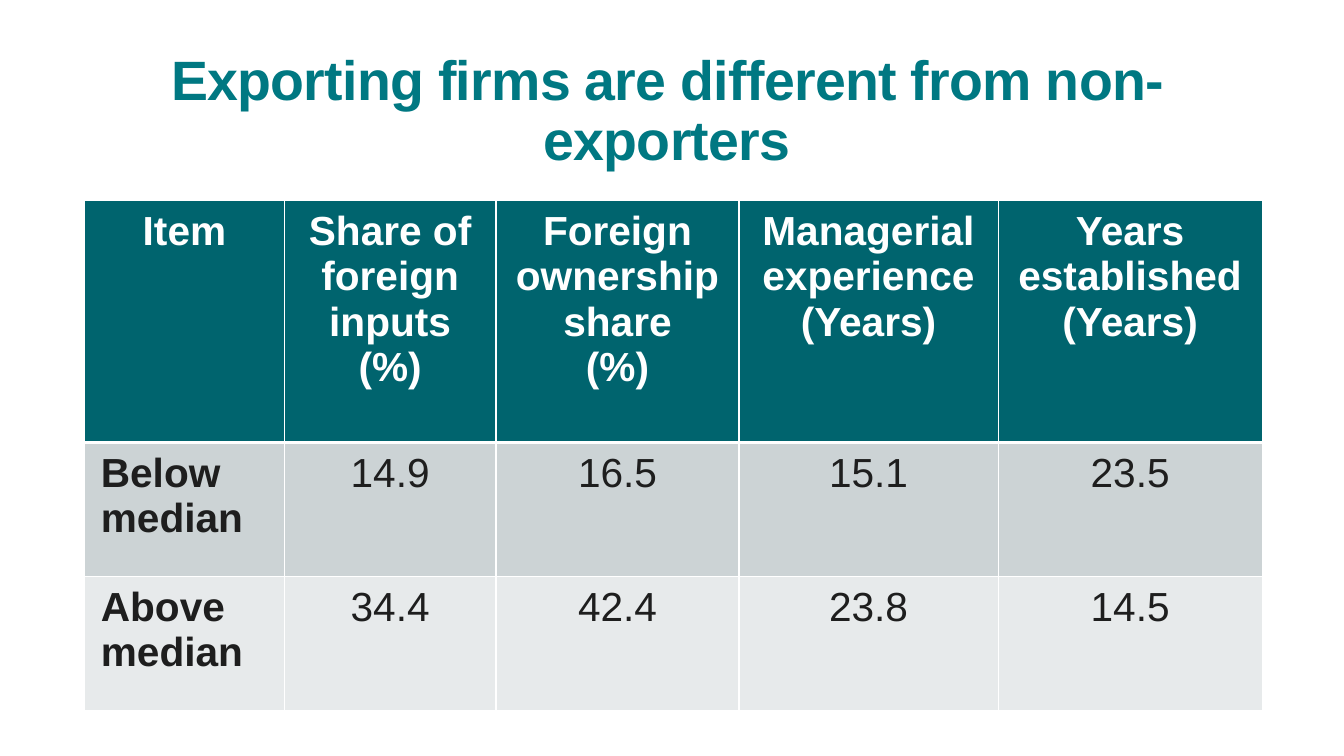
import pptx
import pptx.dml.color
import pptx.enum.text
import pptx.oxml
import pptx.oxml.ns
import pptx.util

ALIGN = pptx.enum.text.PP_ALIGN


def colour(value):
    return pptx.dml.color.RGBColor.from_string(value)


class SlideMaker:
    scale = 9144
    font = "Arial"
    title_colour = "007882"
    header_fill = "00646E"
    row_fills = ["CCD3D5", "E7EAEB"]
    ink = "1E1E1E"
    white = "FFFFFF"

    def __init__(self, width, height):
        self.deck = pptx.Presentation()
        self.deck.slide_width = self.px(width)
        self.deck.slide_height = self.px(height)
        self.page = self.deck.slides.add_slide(self.deck.slide_layouts[6])

    def px(self, length):
        return pptx.util.Emu(length * self.scale)

    def set_text(self, frame, text, size, ink, bold, align):
        frame.text = text
        for para in frame.paragraphs:
            para.alignment = align
            for span in para.runs:
                span.font.name = self.font
                span.font.size = pptx.util.Pt(size)
                span.font.bold = bold
                span.font.color.rgb = colour(ink)

    def title(self, text, left, top, width, height):
        box = self.page.shapes.add_textbox(*map(self.px, (left, top, width, height)))
        frame = box.text_frame
        frame.word_wrap = True
        frame.margin_left = 0
        frame.vertical_anchor = pptx.enum.text.MSO_ANCHOR.MIDDLE
        self.set_text(frame, text, 39.6, self.title_colour, True, ALIGN.CENTER)
        para = frame.paragraphs[0]
        para.line_spacing = 0.9
        para.runs[0].font._element.set("spc", "-50")

    def border(self, cell, side, points):
        namespace = pptx.oxml.ns.nsdecls("a")
        line = pptx.oxml.parse_xml(
            f'<a:ln{side} {namespace} w="{pptx.util.Pt(points)}"><a:solidFill>'
            f'<a:srgbClr val="{self.white}"/></a:solidFill></a:ln{side}>'
        )
        cell._tc.get_or_add_tcPr().append(line)

    def cell(self, cell, text, row, column):
        header = row == 0
        cell.margin_left = cell.margin_right = self.px(16)
        cell.margin_top = cell.margin_bottom = self.px(8)
        edges = {"L": 1, "R": 1, "T": 3 if row == 1 else 1, "B": 3 if header else 1}
        for side, points in edges.items():
            self.border(cell, side, points)
        cell.fill.solid()
        fill = self.header_fill if header else self.row_fills[row - 1]
        cell.fill.fore_color.rgb = colour(fill)
        label = column == 0
        align = ALIGN.LEFT if label and not header else ALIGN.CENTER
        ink = self.white if header else self.ink
        self.set_text(cell.text_frame, text, 29, ink, header or label, align)

    def table(self, rows, left, top, widths, heights):
        place = (left, top, sum(widths), sum(heights))
        frame = self.page.shapes.add_table(len(rows), len(widths), *map(self.px, place))
        table = frame.table
        for column, width in zip(table.columns, widths):
            column.width = self.px(width)
        for line, height in zip(table.rows, heights):
            line.height = self.px(height)
        for row, texts in enumerate(rows):
            for column, text in enumerate(texts):
                self.cell(table.cell(row, column), text, row, column)


def main():
    maker = SlideMaker(1333, 750)
    rows = [
        ["Item", "Share of foreign inputs\n(%)", "Foreign ownership share\n(%)",
         "Managerial experience\n(Years)", "Years established\n(Years)"],
        ["Below median", "14.9", "16.5", "15.1", "23.5"],
        ["Above median", "34.4", "42.4", "23.8", "14.5"],
    ]
    maker.table(rows, 84, 199, [198, 210, 241, 257, 262], [240, 133, 133])
    maker.title("Exporting firms are different from non-exporters", 57, 45, 1219, 133)
    maker.deck.save("out.pptx")


if __name__ == "__main__":
    main()
